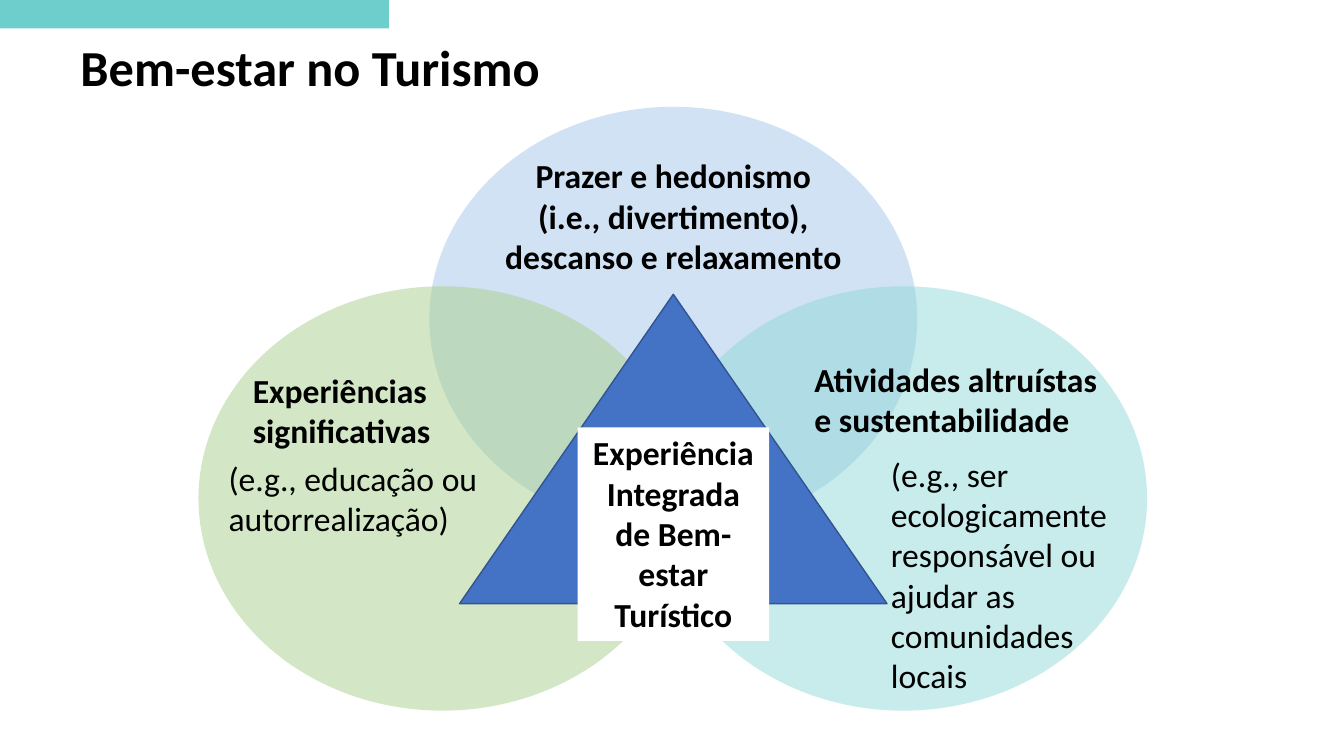
from lxml import etree
from pptx import Presentation
from pptx.dml.color import RGBColor
from pptx.enum import shapes, text
from pptx.oxml import ns
from pptx.util import Pt

COLORS = {
    "accent": "6ECECB",
    "pleasure": "BDD7EE",
    "meaning": "A9D18E",
    "altruism": "92DAD8",
    "triangle": "4472C4",
    "outline": "325491",
    "white": "FFFFFF",
    "ink": "000000",
}
SHAPE = shapes.MSO_SHAPE
CENTER = text.PP_ALIGN.CENTER


def rgb(name):
    return RGBColor.from_string(COLORS[name])


def add_figure(slide, kind, box, color, opacity=100, outline=None):
    figure = slide.shapes.add_shape(kind, *map(Pt, box))
    figure.shadow.inherit = False
    figure.fill.solid()
    figure.fill.fore_color.rgb = rgb(color)
    if opacity < 100:
        fill_color = figure.fill._xPr.find(ns.qn("a:solidFill"))[0]
        alpha = etree.SubElement(fill_color, ns.qn("a:alpha"))
        alpha.set("val", str(opacity * 1000))
    if outline:
        figure.line.color.rgb = rgb(outline)
        figure.line.width = Pt(1)
    else:
        figure.line.fill.background()
    return figure


def write(holder, lines, size=24, bold=True, align=text.PP_ALIGN.LEFT, grow=True):
    frame = holder.text_frame
    frame.word_wrap = True
    frame.vertical_anchor = text.MSO_ANCHOR.TOP
    if grow:
        frame.auto_size = text.MSO_AUTO_SIZE.SHAPE_TO_FIT_TEXT
    frame.text = "\n".join(lines)
    for paragraph in frame.paragraphs:
        paragraph.alignment = align
        paragraph.font.name = "Calibri"
        paragraph.font.size = Pt(size)
        paragraph.font.bold = bold
        paragraph.font.color.rgb = rgb("ink")
    return frame


def add_label(slide, box, *lines, **style):
    return write(slide.shapes.add_textbox(*map(Pt, box)), lines, **style)


def main():
    deck = Presentation()
    deck.slide_width, deck.slide_height = Pt(960), Pt(540)
    slide = deck.slides.add_slide(deck.slide_layouts[6])

    add_figure(slide, SHAPE.RECTANGLE, (0, 0, 277.9, 20.2), "accent")
    circles = [
        (306.7, 76.3, "pleasure", 70),
        (141.8, 204.5, "meaning", 50),
        (470.9, 204.5, "altruism", 50),
    ]
    for left, top, color, opacity in circles:
        add_figure(slide, SHAPE.OVAL, (left, top, 348.5, 303.1), color, opacity)
    add_figure(slide, SHAPE.ISOSCELES_TRIANGLE, (328.3, 210.2, 305.3, 221),
               "triangle", outline="outline")

    title = add_label(slide, (50.4, 27.4, 532.1, 54.7), "Bem-estar no Turismo",
                      size=36, grow=False)
    title.paragraphs[0].line_spacing = 0.9

    add_label(slide, (173.5, 260.6, 254.9, 65.5), "Experiências significativas")
    add_label(slide, (353.5, 107.3, 254.9, 94.3),
              "Prazer e hedonismo (i.e., divertimento), descanso e relaxamento",
              align=CENTER)
    add_label(slide, (574.6, 252.7, 222.5, 65.5),
              "Atividades altruístas", "e sustentabilidade")

    integrated = add_figure(slide, SHAPE.RECTANGLE,
                            (412.6, 305.3, 136.8, 152.6), "white")
    write(integrated, ["Experiência Integrada de Bem-estar Turístico"], align=CENTER)

    add_label(slide, (156.2, 323.3, 197.3, 65.5),
              "(e.g., educação ou autorrealização)", bold=False)
    add_label(slide, (629.3, 320.4, 183.6, 181.4),
              "(e.g., ser ecologicamente responsável ou ajudar as comunidades locais",
              bold=False)

    deck.save("out.pptx")


if __name__ == "__main__":
    main()
